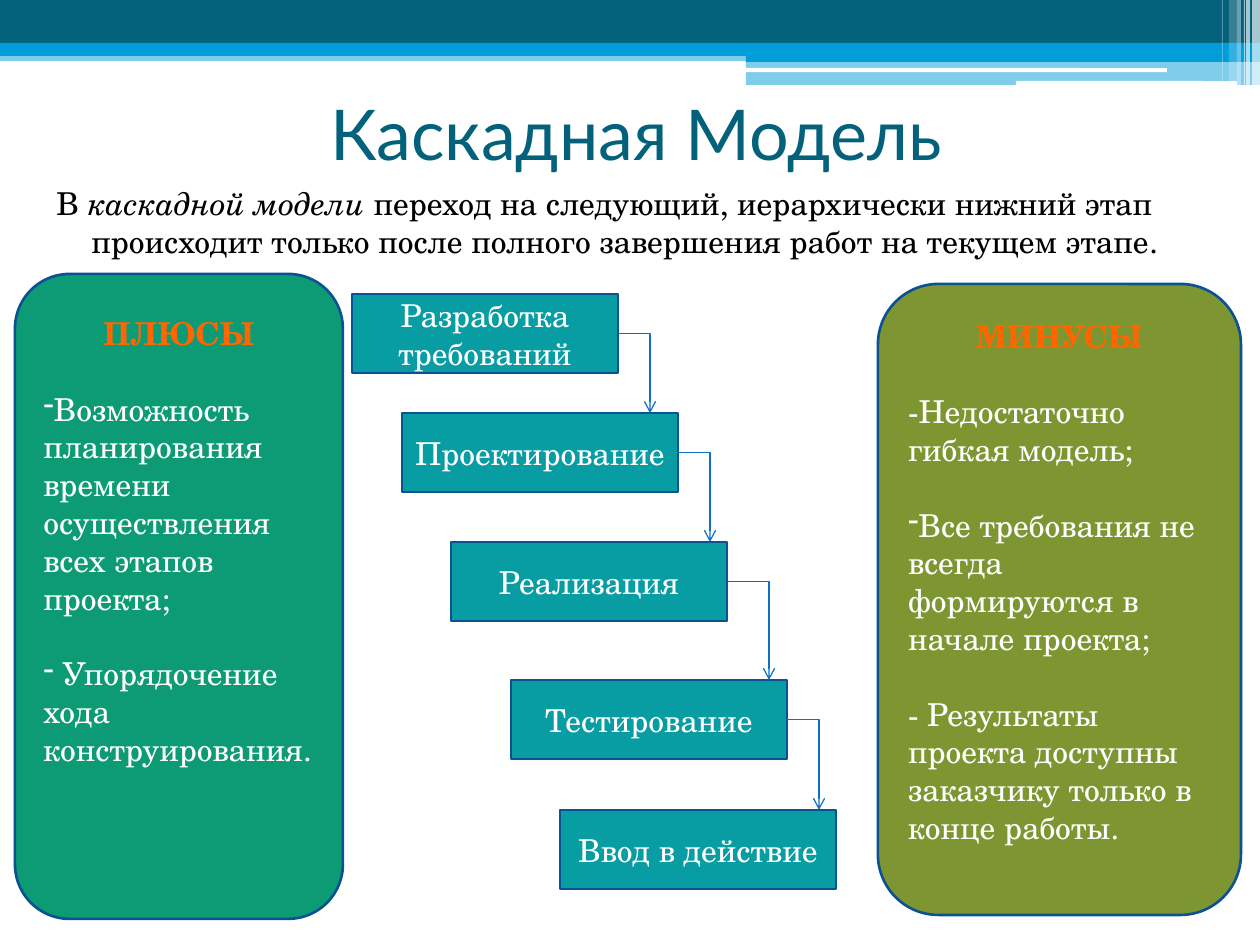
"""Build the slide on the cascade model with its stages, pluses and minuses."""
from lxml import etree
from pptx import Presentation
from pptx.dml.color import RGBColor
from pptx.enum.shapes import MSO_CONNECTOR, MSO_SHAPE
from pptx.enum.text import MSO_ANCHOR, PP_ALIGN
from pptx.oxml.ns import qn
from pptx.util import Pt

RECT, ROUND = MSO_SHAPE.RECTANGLE, MSO_SHAPE.ROUNDED_RECTANGLE
ELBOW = MSO_CONNECTOR.ELBOW
TOP, MIDDLE = MSO_ANCHOR.TOP, MSO_ANCHOR.MIDDLE
LEFT, CENTER = PP_ALIGN.LEFT, PP_ALIGN.CENTER
SCALE = 914400 / 126
SANS, SERIF = "Lato", "TeX Gyre Schola"
COLORS = {
    "dark": "04617B", "sky": "009DD9", "white": "FFFFFF", "black": "000000",
    "stage": "089CA3", "edge": "0B5292", "arrow": "0F6FC6",
    "plus": "0C9B74", "minus": "7E9632", "head": "FF6600",
}

BANDS = [
    (RECT, (0, 50, 1260, 11), "sky", 50),
    (RECT, (0, 0, 1260, 43), "dark", 100),
    (RECT, (0, 43, 1260, 13), "sky", 100),
    (RECT, (746, 49, 514, 13), "sky", 100),
    (RECT, (746, 60, 514, 25), "sky", 50),
    (ROUND, (745, 68, 422, 4), "white", 100),
    (ROUND, (1016, 81, 221, 5), "white", 100),
]
STRIPES = [(1252, 8, 86, 65), (1246, 4, 86, 65), (1244, 1, 86, 60),
           (1237, 4, 86, 40), (1229, 8, 81, 20), (1222, 1, 81, 30)]
TITLE = "Каскадная Модель"
INTRO = [
    ("В ", False),
    ("каскадной модели ", True),
    ("переход на следующий, иерархически нижний этап происходит только "
     "после полного завершения работ на текущем этапе.", False),
]
STAGES = [
    ("Разработка требований", 352, 294, 266, 32),
    ("Проектирование", 402, 413, 276, 32),
    ("Реализация", 451, 542, 276, 42),
    ("Тестирование", 511, 680, 276, 32),
    ("Ввод в действие", 560, 810, 276, 0),
]
STAGE_H = 79
PANELS = [
    ("ПЛЮСЫ", "plus", (15, 274, 328, 645), 24, [
        "Возможность планирования времени осуществления всех этапов проекта;",
        " Упорядочение хода конструирования."]),
    ("МИНУСЫ", "minus", (878, 284, 363, 631), 15, [
        "-Недостаточно гибкая модель;",
        "Все требования не всегда формируются в начале проекта;",
        "- Результаты проекта доступны заказчику только в конце работы."]),
]
GAP = Pt(21.6)


def px(*nums):
    return [round(n * SCALE) for n in nums]


def rgb(name):
    return RGBColor.from_string(COLORS[name])


def add_box(slide, kind, box, fill, edge=None, alpha=100):
    shape = slide.shapes.add_shape(kind, *px(*box))
    shape.shadow.inherit = False
    shape.fill.solid()
    shape.fill.fore_color.rgb = rgb(fill)
    if alpha < 100:
        color = shape.fill._xPr.find(qn("a:solidFill"))[0]
        etree.SubElement(color, qn("a:alpha"), val=str(alpha * 1000))
    if edge:
        shape.line.color.rgb = rgb(edge)
        shape.line.width = Pt(1.5)
    else:
        shape.line.fill.background()
    return shape


def add_frame(slide, box, anchor):
    frame = slide.shapes.add_textbox(*px(*box)).text_frame
    frame.word_wrap = True
    frame.vertical_anchor = anchor
    return frame


def style(para, color, align=LEFT, size=18, face=SERIF, bold=False):
    para.alignment = align
    for run in para.runs:
        font = run.font
        font.name, font.size, font.bold = face, Pt(size), bold
        font.color.rgb = rgb(color)


def add_arrow(slide, start, end):
    link = slide.shapes.add_connector(ELBOW, *px(*start, *end))
    link.line.color.rgb = rgb("arrow")
    link.line.width = Pt(0.75)
    props = link._element.spPr
    props.find(qn("a:prstGeom")).set("prst", "bentConnector2")
    etree.SubElement(props.find(qn("a:ln")), qn("a:tailEnd"), type="arrow")
    etree.SubElement(props, qn("a:effectLst"))


def add_panel(slide, head, fill, box, inset, items):
    frame = add_box(slide, ROUND, box, fill, "edge").text_frame
    frame.word_wrap = True
    frame.vertical_anchor = TOP
    frame.margin_top = px(inset)[0]
    frame.text = head
    style(frame.paragraphs[0], "head", CENTER, bold=True)
    for item in items:
        para = frame.add_paragraph()
        para.text = item
        para.space_before = GAP
        style(para, "white")
        if not item.startswith("-"):
            etree.SubElement(para._p.get_or_add_pPr(), qn("a:buChar"), char="-")


def main():
    deck = Presentation()
    deck.slide_width, deck.slide_height = px(1260, 945)
    slide = deck.slides.add_slide(deck.slide_layouts[6])

    for kind, box, fill, alpha in BANDS:
        add_box(slide, kind, box, fill, alpha=alpha)
    for x, wide, high, alpha in STRIPES:
        add_box(slide, RECT, (x, 0, wide, high), "white", alpha=alpha)

    frame = add_frame(slide, (69, 59, 1134, 147), MIDDLE)
    frame.text = TITLE
    style(frame.paragraphs[0], "dark", CENTER, 40, SANS)

    para = add_frame(slide, (29, 178, 1201, 90), TOP).paragraphs[0]
    for text, slant in INTRO:
        run = para.add_run()
        run.text = text
        run.font.italic = slant
    style(para, "black")
    para.space_before = Pt(3)
    props = para._p.get_or_add_pPr()
    props.set("marL", str(px(50)[0]))
    props.set("indent", str(px(-35)[0]))

    for text, x, y, wide, _ in STAGES:
        box = (x, y, wide, STAGE_H)
        frame = add_box(slide, RECT, box, "stage", "edge").text_frame
        frame.word_wrap = True
        frame.vertical_anchor = MIDDLE
        frame.text = text
        style(frame.paragraphs[0], "white", CENTER)
    for (_, x, y, wide, reach), after in zip(STAGES, STAGES[1:]):
        right = x + wide
        add_arrow(slide, (right, y + STAGE_H / 2), (right + reach, after[2]))

    for panel in PANELS:
        add_panel(slide, *panel)
    deck.save("out.pptx")


if __name__ == "__main__":
    main()
